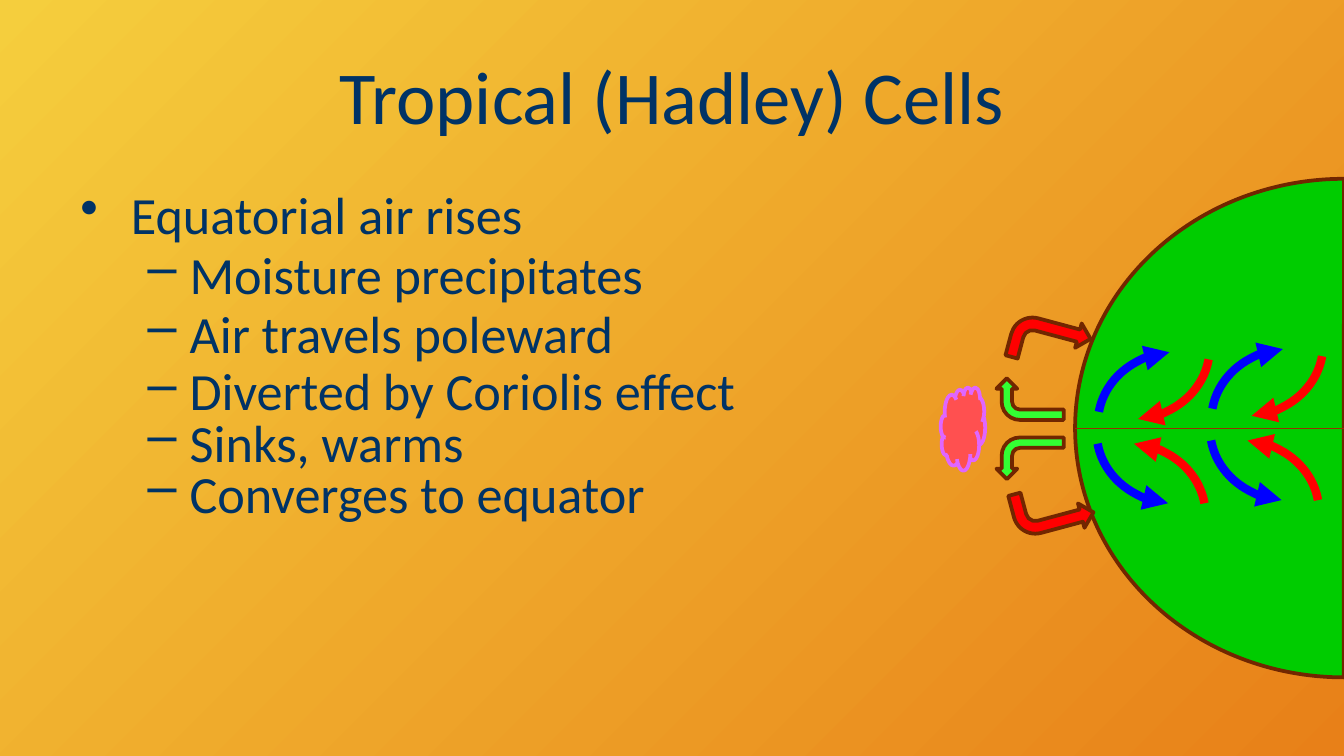
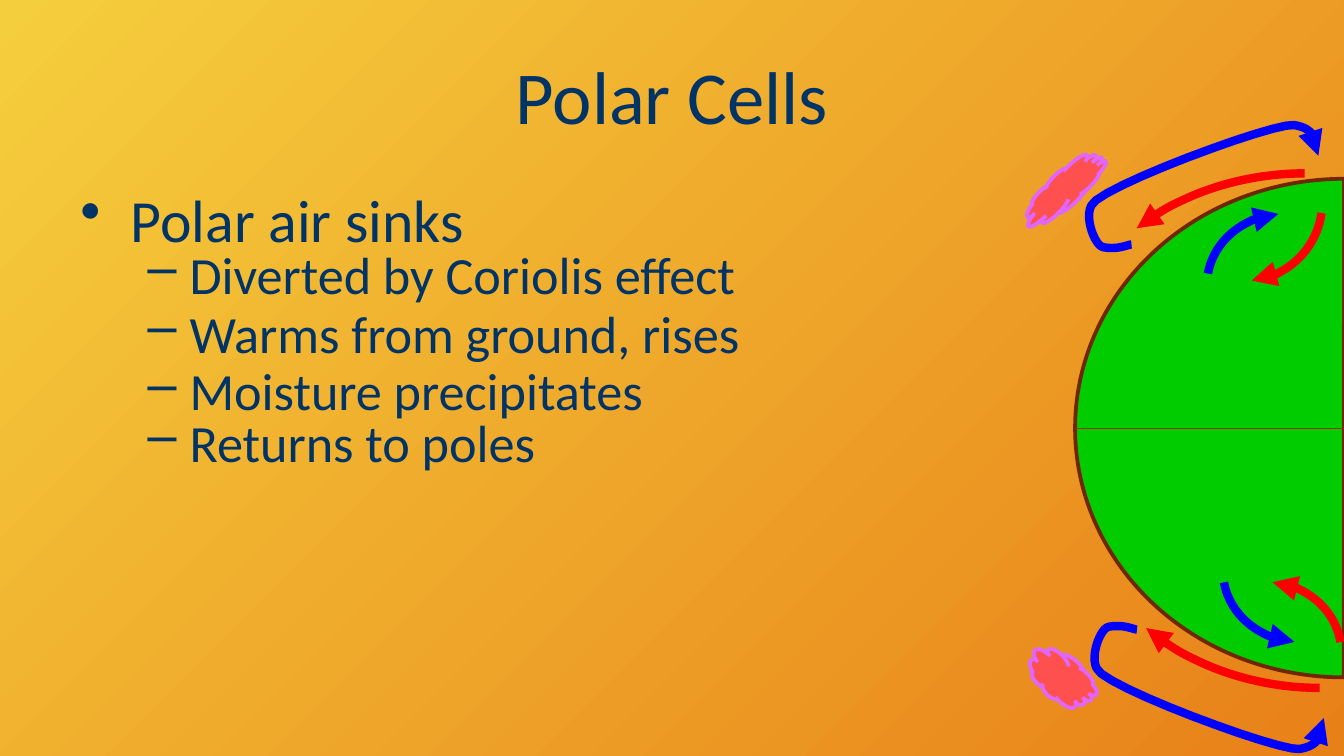
from lxml import etree
from pptx import Presentation
from pptx.dml.color import RGBColor
from pptx.enum.shapes import MSO_CONNECTOR, MSO_SHAPE
from pptx.enum.text import MSO_ANCHOR, PP_ALIGN
from pptx.oxml.ns import qn
from pptx.util import Pt

ARC = MSO_SHAPE.ARC
BENT_ARROW = MSO_SHAPE.BENT_ARROW
CHORD = MSO_SHAPE.CHORD
CLOUD = MSO_SHAPE.CLOUD
STRAIGHT = MSO_CONNECTOR.STRAIGHT
CENTER = PP_ALIGN.CENTER
LEFT = PP_ALIGN.LEFT
MIDDLE = MSO_ANCHOR.MIDDLE
TOP = MSO_ANCHOR.TOP

FONT = "Calibri"
COLORS = {
    "sky_start": "F5CE3D",
    "sky_end": "E88018",
    "text": "003366",
    "globe": "00CC00",
    "outline": "712600",
    "equator": "963200",
    "cold": "0000FF",
    "warm": "FF0000",
    "rising": "33FF33",
    "cloud": "FF5050",
    "cloud_edge": "E066FF",
}
WIND_SIZE = (84.2, 76.3)
WIND_SWEEP = (113.0, 158.56)
SURFACE_SWEEP = (131.46, 161.84)
WIND_WIDTH = 4.5
POINT_TOPS = (126, 157.7, 188.6, 216, 243.4)
LOOP_START = (606.2, 131)
LOOP_CURVES = (
    ((604.1, 131), (599.8, 133.9), (591.1, 132.5)),
    ((586.8, 131.8), (581, 117.4), (584.6, 110.2)),
    ((587.5, 100.8), (682.6, 65.5), (693.4, 67)),
    ((705.6, 69.1), (704.9, 76.3), (706.3, 83.5)),
)
LOOP_STEPS = 12


def rgb(name):
    return RGBColor.from_string(COLORS[name])


def bezier(start, first, second, end, t):
    return tuple(
        (1 - t) ** 3 * a + 3 * (1 - t) ** 2 * t * b + 3 * (1 - t) * t**2 * c + t**3 * d
        for a, b, c, d in zip(start, first, second, end)
    )


def loop_points():
    points = [LOOP_START]
    for curve in LOOP_CURVES:
        start = points[-1]
        points += [bezier(start, *curve, step / LOOP_STEPS) for step in range(1, LOOP_STEPS + 1)]
    return points


class Deck:
    def __init__(self):
        self.prs = Presentation()
        self.prs.slide_width, self.prs.slide_height = Pt(720), Pt(405)
        self.slide = None

    def add_slide(self, title, heading, heading_size, points):
        self.slide = self.prs.slides.add_slide(self.prs.slide_layouts[6])
        sky = self.slide.background.fill
        sky.gradient()
        sky.gradient_angle = 315
        for stop, name in zip(sky.gradient_stops, ("sky_start", "sky_end")):
            stop.color.rgb = rgb(name)
        self.text(title, (36, 17, 648, 67.7), 40, CENTER, MIDDLE)
        self.bullet(heading, (36, 94.3, 396, 44.6), heading_size, "•", 0, 27)
        for point, top in zip(points, POINT_TOPS):
            self.bullet(point, (36, top, 401.8, 36), 28, "–", 1, 22.5)

    def text(self, words, box, size, align=LEFT, anchor=TOP):
        frame = self.slide.shapes.add_textbox(*map(Pt, box)).text_frame
        frame.word_wrap = True
        frame.vertical_anchor = anchor
        paragraph = frame.paragraphs[0]
        paragraph.alignment = align
        run = paragraph.add_run()
        run.text = words
        run.font.name = FONT
        run.font.size = Pt(size)
        run.font.color.rgb = rgb("text")
        return paragraph

    def bullet(self, words, box, size, mark, level, hang):
        paragraph = self.text(words, box, size)
        paragraph.level = level
        paragraph.space_before = Pt(size * 0.2)
        props = paragraph._p.get_or_add_pPr()
        props.set("marL", str(Pt(27 + 31.5 * level)))
        props.set("indent", str(-Pt(hang)))
        etree.SubElement(props, qn("a:buChar")).set("char", mark)

    def style(self, shape, fill, line, width, arrow=None):
        shape.shadow.inherit = False
        if fill:
            shape.fill.solid()
            shape.fill.fore_color.rgb = rgb(fill)
        else:
            shape.fill.background()
        shape.line.color.rgb = rgb(line)
        shape.line.width = Pt(width)
        if arrow:
            outline = shape.element.spPr.find(qn("a:ln"))
            etree.SubElement(outline, qn(f"a:{arrow}End")).set("type", "triangle")

    def shape(self, kind, box, fill, line, width=2, turn=0, south=False, sweep=(), arrow=None):
        shape = self.slide.shapes.add_shape(kind, *map(Pt, box))
        for index, angle in enumerate(sweep):
            shape.adjustments[index] = angle
        shape.rotation = turn
        if south:
            shape.element.spPr.find(qn("a:xfrm")).set("flipV", "1")
        self.style(shape, fill, line, width, arrow)

    def globe(self):
        self.shape(CHORD, (576, 95.8, 288, 267.1), "globe", "outline", sweep=(54.01, 162))
        equator = self.slide.shapes.add_connector(STRAIGHT, Pt(576), Pt(229.7), Pt(720), Pt(229.7))
        equator.line.color.rgb = rgb("equator")
        equator.line.width = Pt(0.75)
        etree.SubElement(equator.element.spPr, qn("a:effectLst"))

    def wind(self, left, top, color, south=False, size=WIND_SIZE):
        turn = 180 if color == "warm" else 0
        self.shape(ARC, (left, top, *size), None, color, WIND_WIDTH, turn, south, WIND_SWEEP, "tail")

    def surface_wind(self, box, south=False):
        self.shape(ARC, box, None, "warm", WIND_WIDTH, 0, south, SURFACE_SWEEP, "head")

    def bent_arrow(self, box, color, turn, south=False):
        self.shape(BENT_ARROW, box, color, "outline", 2, turn, south)

    def cloud(self, box, turn=0, south=False):
        self.shape(CLOUD, box, "cloud", "cloud_edge", 2, turn, south)

    def loop(self, south=False):
        points = loop_points()
        if south:
            points = [(x + 2.9, 468.3 - y) for x, y in points]
        start, *rest = [(Pt(x), Pt(y)) for x, y in points]
        builder = self.slide.shapes.build_freeform(*start)
        builder.add_line_segments(rest, close=False)
        self.style(builder.convert_to_shape(), None, "cold", WIND_WIDTH, "tail")


def tropical_cells(deck):
    deck.add_slide(
        "Tropical (Hadley) Cells", "Equatorial air rises", 28,
        ("Moisture precipitates", "Air travels poleward", "Diverted by Coriolis effect",
         "Sinks, warms", "Converges to equator"),
    )
    deck.globe()
    winds = (
        (588.2, 188.6, "cold", False),
        (563.8, 148.3, "warm", False),
        (587.5, 193.5, "cold", True),
        (561.6, 237.6, "warm", True),
    )
    for left, top, color, south in winds:
        for column in range(2):
            deck.wind(left + 60.8 * column, top - 1.7 * column, color, south)
    deck.bent_arrow((540.7, 195.8, 22.3, 36), "rising", 270)
    deck.bent_arrow((540.7, 227.5, 22.3, 36), "rising", 90, True)
    deck.bent_arrow((541.4, 169.2, 41.8, 27), "warm", 15)
    deck.bent_arrow((542.9, 259.9, 41.8, 27), "warm", 345, True)
    deck.cloud((504, 207.4, 23.8, 44.6))


def polar_cells(deck):
    deck.add_slide(
        "Polar Cells", "Polar air sinks", 32,
        ("Diverted by Coriolis effect", "Warms from ground, rises",
         "Moisture precipitates", "Returns to poles"),
    )
    deck.globe()
    deck.surface_wind((570.2, 92.9, 258.5, 205.9))
    deck.surface_wind((576, 152.6, 262.8, 216), True)
    deck.wind(624.2, 65.5, "warm", size=(84.2, 85))
    deck.wind(637.2, 311.8, "warm", True, (81.4, 76.3))
    deck.wind(646.6, 114.5, "cold")
    deck.wind(655.2, 267.8, "cold", True)
    deck.cloud((560.9, 74.9, 18, 54), 45)
    deck.cloud((556.6, 342.7, 23.8, 40.3), 315, True)
    for south in (False, True):
        deck.loop(south)


def main():
    deck = Deck()
    tropical_cells(deck)
    polar_cells(deck)
    deck.prs.save("out.pptx")


if __name__ == "__main__":
    main()
